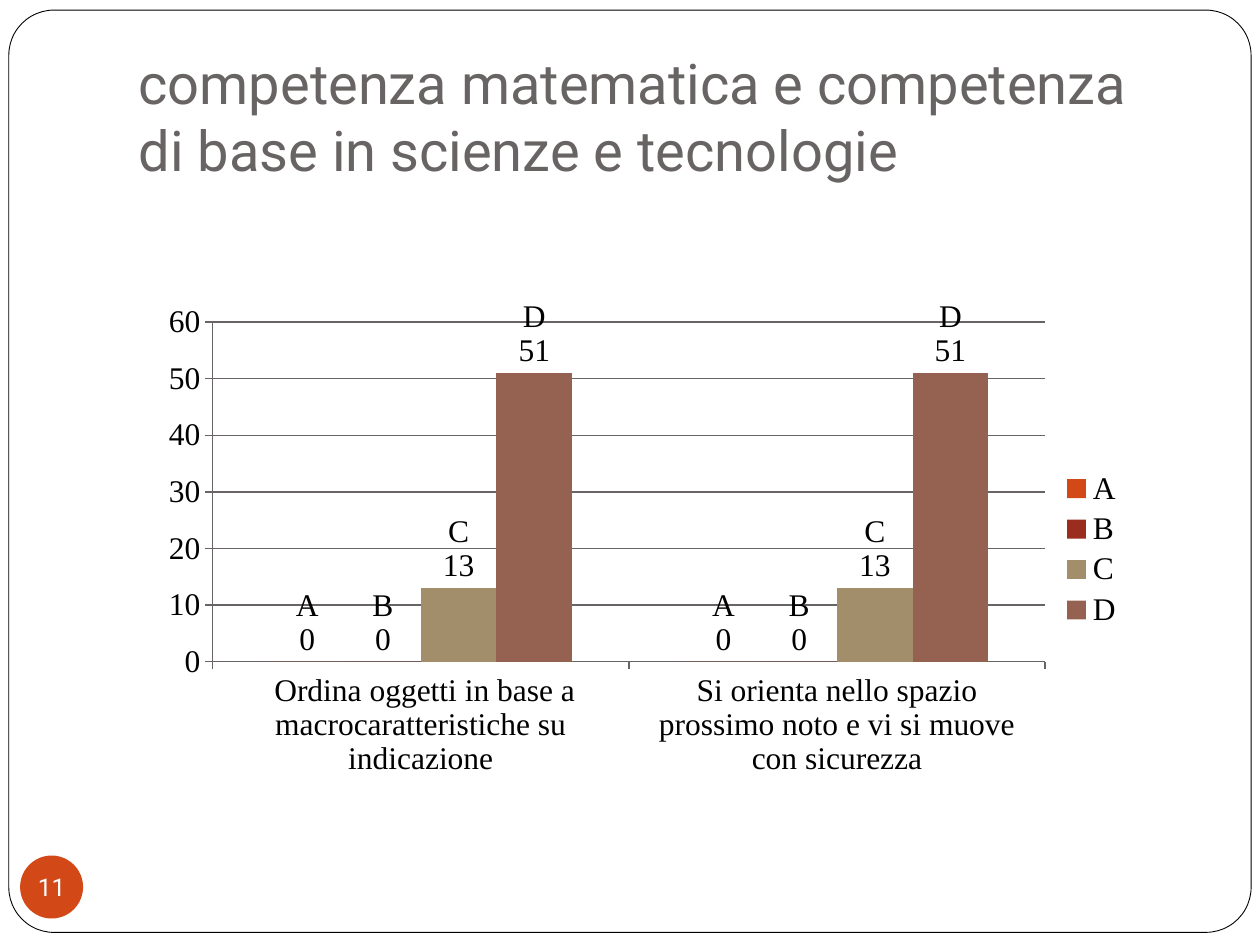
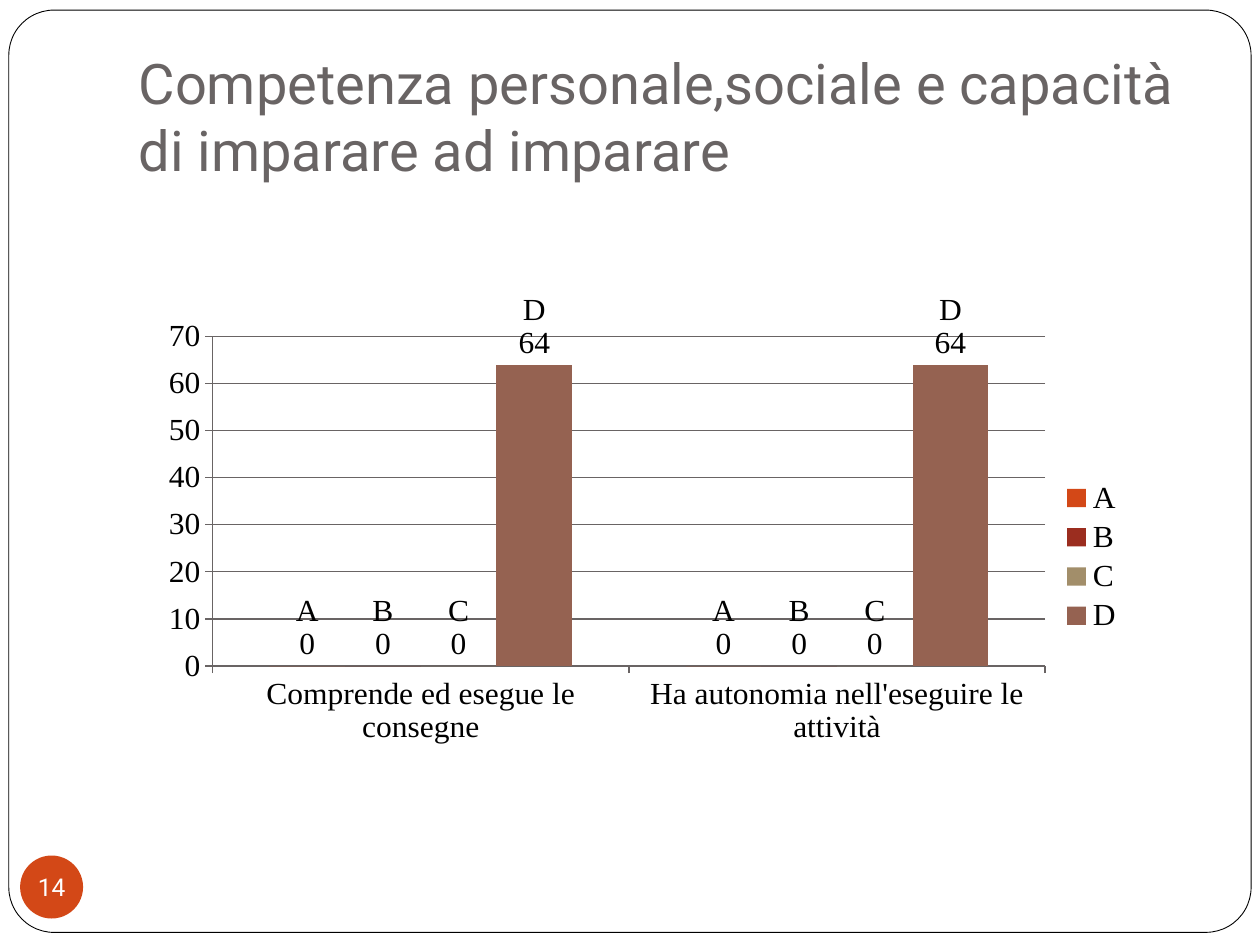
from pptx import Presentation
from pptx.chart.data import CategoryChartData as Data
from pptx.dml.color import RGBColor
from pptx.enum.chart import XL_CHART_TYPE as Kind
from pptx.enum.chart import XL_LABEL_POSITION as Spot
from pptx.enum.chart import XL_LEGEND_POSITION as Side
from pptx.enum.chart import XL_TICK_MARK as Tick
from pptx.enum.shapes import MSO_SHAPE as Form
from pptx.enum.text import MSO_ANCHOR as Anchor
from pptx.enum.text import MSO_AUTO_SIZE as Fit
from pptx.enum.text import PP_ALIGN as Align
from pptx.oxml import parse_xml
from pptx.oxml.ns import nsdecls, qn
from pptx.util import Inches, Pt

WHITE = RGBColor(0xFF, 0xFF, 0xFF)
BLACK = RGBColor(0, 0, 0)
GREY = RGBColor(0x69, 0x64, 0x64)
ORANGE = RGBColor(0xD3, 0x48, 0x17)
BARS = [ORANGE, RGBColor(0x9B, 0x2D, 0x1F),
        RGBColor(0xA2, 0x8E, 0x6A), RGBColor(0x95, 0x62, 0x51)]
LEVELS = "ABCD"
SANS = "Roboto"
SERIF = "Times New Roman"

FRAME = (0.07, 0.08, 9.86, 7.32)
TITLE = (1, 0.3, 8.5, 1.25)
BADGE = (0.16, 6.79, 0.5, 0.5)
CHART = (1.22, 2.33, 7.8, 4.06)
PLOT = {"x": 0.06, "y": 0.056, "w": 0.847, "h": 0.664}

PAGES = [
    ("11", "competenza matematica e competenza di base in scienze e tecnologie",
     [" Ordina oggetti in base a macrocaratteristiche su indicazione",
      "Si orienta nello spazio prossimo noto e vi si muove con sicurezza"],
     [(0, 0), (0, 0), (13, 13), (51, 51)]),
    ("14", "Competenza personale,sociale e capacità di imparare ad imparare",
     ["Comprende ed esegue le consegne",
      "Ha autonomia nell'eseguire le attività"],
     [(0, 0), (0, 0), (0, 0), (64, 64)]),
]


def inch(box):
    """Turn a box of numbers into lengths."""
    return [Inches(n) for n in box]


def write(para, text, size, color):
    """Add one run in the sans font."""
    run = para.add_run()
    run.text = text
    run.font.name = SANS
    run.font.size = Pt(size)
    run.font.color.rgb = color


def add_form(slide, form, box, fill):
    """Add a flat preset shape without an outline."""
    shape = slide.shapes.add_shape(form, *inch(box))
    shape.shadow.inherit = False
    shape.fill.solid()
    shape.fill.fore_color.rgb = fill
    shape.line.fill.background()
    return shape


def add_frame(slide, box):
    """Draw the rounded page frame behind the other parts."""
    frame = add_form(slide, Form.ROUNDED_RECTANGLE, box, WHITE)
    frame.adjustments[0] = 0.049
    frame.line.color.rgb = BLACK
    frame.line.width = Pt(0.5)
    slide.shapes.element.insert(2, frame.element)


def add_title(slide, box, text):
    """Fill and place the title placeholder."""
    title = slide.shapes.title
    title.left, title.top, title.width, title.height = inch(box)
    frame = title.text_frame
    frame.word_wrap = True
    frame.auto_size = Fit.NONE
    frame.vertical_anchor = Anchor.BOTTOM
    frame.margin_left = frame.margin_right = frame.margin_bottom = Inches(0.1)
    frame.margin_top = Inches(0.05)
    para = frame.paragraphs[0]
    para.alignment = Align.LEFT
    write(para, text, 32, GREY)


def add_badge(slide, box, number):
    """Add the round page number."""
    frame = add_form(slide, Form.OVAL, box, ORANGE).text_frame
    frame.word_wrap = False
    frame.vertical_anchor = Anchor.MIDDLE
    frame.margin_left = frame.margin_right = 0
    frame.margin_top = frame.margin_bottom = 0
    para = frame.paragraphs[0]
    para.alignment = Align.CENTER
    write(para, number, 14, WHITE)


def set_plot(chart):
    """Fix the inner plot area as shares of the chart box."""
    area = next(chart.element.iter(qn("c:plotArea")))
    for old in area.findall(qn("c:layout")):
        area.remove(old)
    sizes = "".join(f'<c:{k} val="{v}"/>' for k, v in PLOT.items())
    area.insert(0, parse_xml(
        f'<c:layout {nsdecls("c")}><c:manualLayout>'
        '<c:layoutTarget val="inner"/><c:xMode val="edge"/>'
        f'<c:yMode val="edge"/>{sizes}</c:manualLayout></c:layout>'))


def add_labels(chart):
    """Label each bar with its series name above its value."""
    for series in chart.plots[0].series:
        labels = series.data_labels
        labels.show_value = True
        labels.show_series_name = True
        labels.position = Spot.OUTSIDE_END
    for flag in list(chart.element.iter(qn("c:showBubbleSize"))):
        flag.addnext(parse_xml(
            f'<c:separator {nsdecls("c")}>\n</c:separator>'))


def add_bars(slide, box, cats, rows):
    """Add the clustered column chart of the levels."""
    data = Data()
    data.categories = cats
    for name, row in zip(LEVELS, rows):
        data.add_series(name, row)
    chart = slide.shapes.add_chart(
        Kind.COLUMN_CLUSTERED, *inch(box), data).chart
    chart.has_title = False
    chart.font.name = SERIF
    chart.font.size = Pt(18)
    chart.font.color.rgb = BLACK
    chart.has_legend = True
    chart.legend.position = Side.RIGHT
    chart.legend.include_in_layout = False
    plot = chart.plots[0]
    plot.gap_width = 150
    plot.overlap = 0
    plot.vary_by_categories = False
    for series, color in zip(plot.series, BARS):
        series.format.fill.solid()
        series.format.fill.fore_color.rgb = color
    chart.value_axis.has_major_gridlines = True
    grid = chart.value_axis.major_gridlines
    for part in (chart.category_axis, chart.value_axis, grid):
        part.format.line.color.rgb = GREY
        part.format.line.width = Pt(0.75)
    for axis in (chart.category_axis, chart.value_axis):
        axis.major_tick_mark = Tick.OUTSIDE
        axis.minor_tick_mark = Tick.NONE
    add_labels(chart)
    set_plot(chart)


def add_page(deck, number, title, cats, rows):
    """Build one chart slide."""
    slide = deck.slides.add_slide(deck.slide_layouts[5])
    add_frame(slide, FRAME)
    add_title(slide, TITLE, title)
    add_badge(slide, BADGE, number)
    add_bars(slide, CHART, cats, rows)


def main():
    """Build and save the deck."""
    deck = Presentation()
    deck.slide_width, deck.slide_height = inch((10, 7.5))
    for page in PAGES:
        add_page(deck, *page)
    deck.save("out.pptx")


if __name__ == "__main__":
    main()
